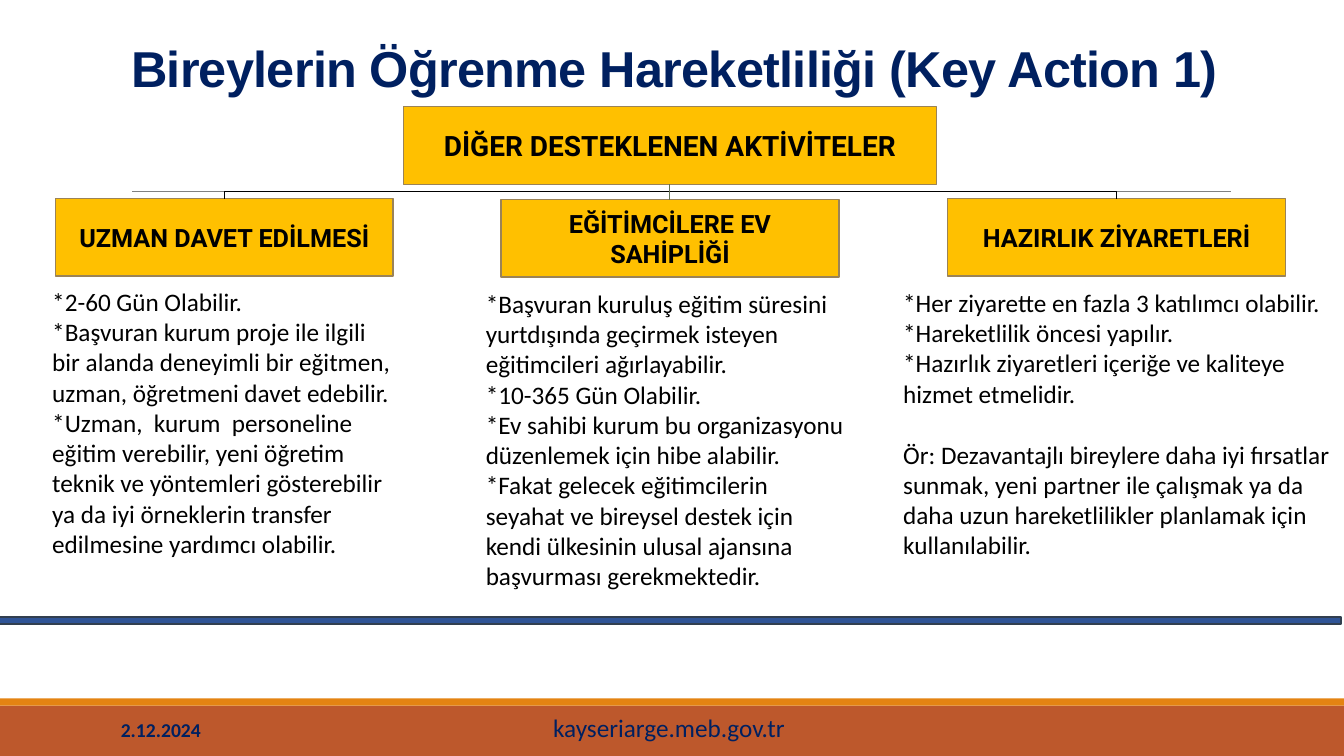
import pptx
import pptx.dml.color
import pptx.enum.shapes
import pptx.enum.text
import pptx.oxml.ns
import pptx.util
from lxml import etree

Inches = pptx.util.Inches
Pt = pptx.util.Pt
ALIGN = pptx.enum.text.PP_ALIGN
ANCHOR = pptx.enum.text.MSO_ANCHOR
CONNECTOR = pptx.enum.shapes.MSO_CONNECTOR
BOTTOM, TOP = 2, 0

COLORS = {
    "rust": "BD582C", "orange": "E48312", "navy": "002060", "blue": "2F5496",
    "slate": "323F4F", "amber": "FFC000", "bronze": "9B8357", "black": "000000",
    "gray": "808080", "olive": "637052", "white": "FFFFFF",
}

COLUMNS = [
    {"left": 0.55, "top": 1.97, "heading": "UZMAN DAVET EDİLMESİ",
     "text_at": (0.42, 2.74, 3.6, 2.93),
     "lines": [
         "*2-60 Gün Olabilir.",
         "*Başvuran kurum proje ile ilgili bir alanda deneyimli bir eğitmen, "
         "uzman, öğretmeni davet edebilir.",
         "*Uzman,  kurum  personeline eğitim verebilir, yeni öğretim teknik ve "
         "yöntemleri gösterebilir ya da iyi örneklerin transfer edilmesine "
         "yardımcı olabilir."]},
    {"left": 4.97, "top": 1.98, "heading": "EĞİTİMCİLERE EV SAHİPLİĞİ",
     "text_at": (4.72, 2.76, 3.83, 3.23),
     "lines": [
         "*Başvuran kuruluş eğitim süresini yurtdışında geçirmek isteyen "
         "eğitimcileri ağırlayabilir.",
         "*10-365 Gün Olabilir.",
         "*Ev sahibi kurum bu organizasyonu düzenlemek için hibe alabilir.",
         "*Fakat gelecek eğitimcilerin seyahat ve bireysel destek için kendi "
         "ülkesinin ulusal ajansına başvurması gerekmektedir."]},
    {"left": 9.4, "top": 1.97, "heading": "HAZIRLIK ZİYARETLERİ",
     "text_at": (8.86, 2.75, 4.47, 2.93),
     "lines": [
         "*Her ziyarette en fazla 3 katılımcı olabilir.",
         "*Hareketlilik öncesi yapılır.",
         "*Hazırlık ziyaretleri içeriğe ve kaliteye hizmet etmelidir."],
     "example": "Ör: Dezavantajlı bireylere daha iyi fırsatlar sunmak, yeni "
                "partner ile çalışmak ya da daha uzun hareketlilikler planlamak "
                "için kullanılabilir."},
]


def rgb(name):
    return pptx.dml.color.RGBColor.from_string(COLORS[name])


def add_text(frame, text, size=18, font="Calibri", color="black", bold=False,
             align=ALIGN.LEFT, before=0, spacing=None):
    para = frame.paragraphs[0]
    if para.runs:
        para = frame.add_paragraph()
    para.alignment = align
    if before:
        para.space_before = Pt(before)
    span = para.add_run()
    span.text = text
    span.font.size = Pt(size)
    span.font.name = font
    span.font.bold = bold
    span.font.color.rgb = rgb(color)
    if spacing is not None:
        span.font._element.set("spc", str(int(spacing * 100)))


class SlideBuilder:
    def __init__(self, page):
        self.page = page

    def prepare(self, frame, insets, anchor):
        frame.word_wrap = True
        frame.vertical_anchor = anchor
        (frame.margin_left, frame.margin_top,
         frame.margin_right, frame.margin_bottom) = map(Inches, insets)

    def bar(self, at, fill, line=None):
        box = self.page.shapes.add_shape(
            pptx.enum.shapes.MSO_SHAPE.RECTANGLE, *map(Inches, at))
        box.shadow.inherit = False
        box.fill.solid()
        box.fill.fore_color.rgb = rgb(fill)
        if line:
            box.line.color.rgb = rgb(line)
            box.line.width = Pt(1)
        else:
            box.line.fill.background()
        return box

    def heading(self, at, text, size):
        box = self.bar(at, "amber", "bronze")
        self.prepare(box.text_frame, [0.13] * 4, ANCHOR.MIDDLE)
        add_text(box.text_frame, text, size=size, font="Roboto", bold=True,
                 align=ALIGN.CENTER)
        return box

    def text(self, at, lines, insets=(0.1, 0.05, 0.1, 0.05), anchor=ANCHOR.TOP,
             fill=None, **style):
        box = self.page.shapes.add_textbox(*map(Inches, at))
        if fill:
            box.fill.solid()
            box.fill.fore_color.rgb = rgb(fill)
        self.prepare(box.text_frame, insets, anchor)
        for line in lines:
            add_text(box.text_frame, line, **style)
        return box

    def line(self, start, end, color, width, kind=CONNECTOR.STRAIGHT):
        link = self.page.shapes.add_connector(kind, *map(Inches, start + end))
        link.line.color.rgb = rgb(color)
        link.line.width = Pt(width)
        etree.SubElement(link._element.spPr, pptx.oxml.ns.qn("a:effectLst"))
        return link

    def join(self, parent, child, color, kind=CONNECTOR.STRAIGHT):
        link = self.line((0, 0), (1, 1), color, 0.75, kind)
        link.begin_connect(parent, BOTTOM)
        link.end_connect(child, TOP)
        return link

    def branch(self, parent, child):
        link = self.join(parent, child, "black", CONNECTOR.ELBOW)
        start_x, end_x = link.begin_x, link.end_x
        start_y, end_y = link.begin_y, link.end_y
        drop, reach = end_y - start_y, abs(end_x - start_x)
        frame = link._element.spPr.xfrm
        frame.flipH = end_x > start_x
        frame.rot = 270 if end_x > start_x else 90
        link.left = (start_x + end_x - drop) // 2
        link.top = (start_y + end_y - reach) // 2
        link.width, link.height = drop, reach


def main():
    deck = pptx.Presentation()
    deck.slide_width = Inches(13.33)
    deck.slide_height = Inches(7.5)
    builder = SlideBuilder(deck.slides.add_slide(deck.slide_layouts[6]))

    builder.bar((0, 7, 13.33, 0.5), "rust")
    builder.bar((0, 6.93, 13.33, 0.07), "orange")
    builder.line((1.31, 1.9), (12.21, 1.9), "gray", 0.5)
    builder.text((4.99, 7.02, 3.29, 0.4), ["kayseriarge.meb.gov.tr"],
                 color="navy", align=ALIGN.CENTER)
    builder.text((1.1, 7.04, 2.7, 0.4), ["2.12.2024"], anchor=ANCHOR.MIDDLE,
                 size=14, color="navy", bold=True)
    builder.bar((-0.03, 6.12, 13.33, 0.07), "blue", "slate")

    parent = builder.heading((4, 1.06, 5.29, 0.77),
                             "DİĞER DESTEKLENEN AKTİVİTELER", 20)
    children = []
    for column in COLUMNS:
        children.append(builder.heading(
            (column["left"], column["top"], 3.35, 0.77), column["heading"], 18))
        box = builder.text(column["text_at"], column["lines"], insets=[0.1] * 4)
        if "example" in column:
            add_text(box.text_frame, column["example"], before=22)

    left, middle, right = children
    builder.branch(parent, right)
    builder.branch(parent, left)
    builder.join(parent, middle, "olive")

    builder.text((1.3, 0.11, 10.93, 0.86),
                 ["Bireylerin Öğrenme Hareketliliği (Key Action 1)"],
                 insets=(0, 0.25, 0, 0), anchor=ANCHOR.MIDDLE, fill="white",
                 size=36, font="Arial", color="navy", bold=True, spacing=-0.5)
    deck.save("out.pptx")


if __name__ == "__main__":
    main()
